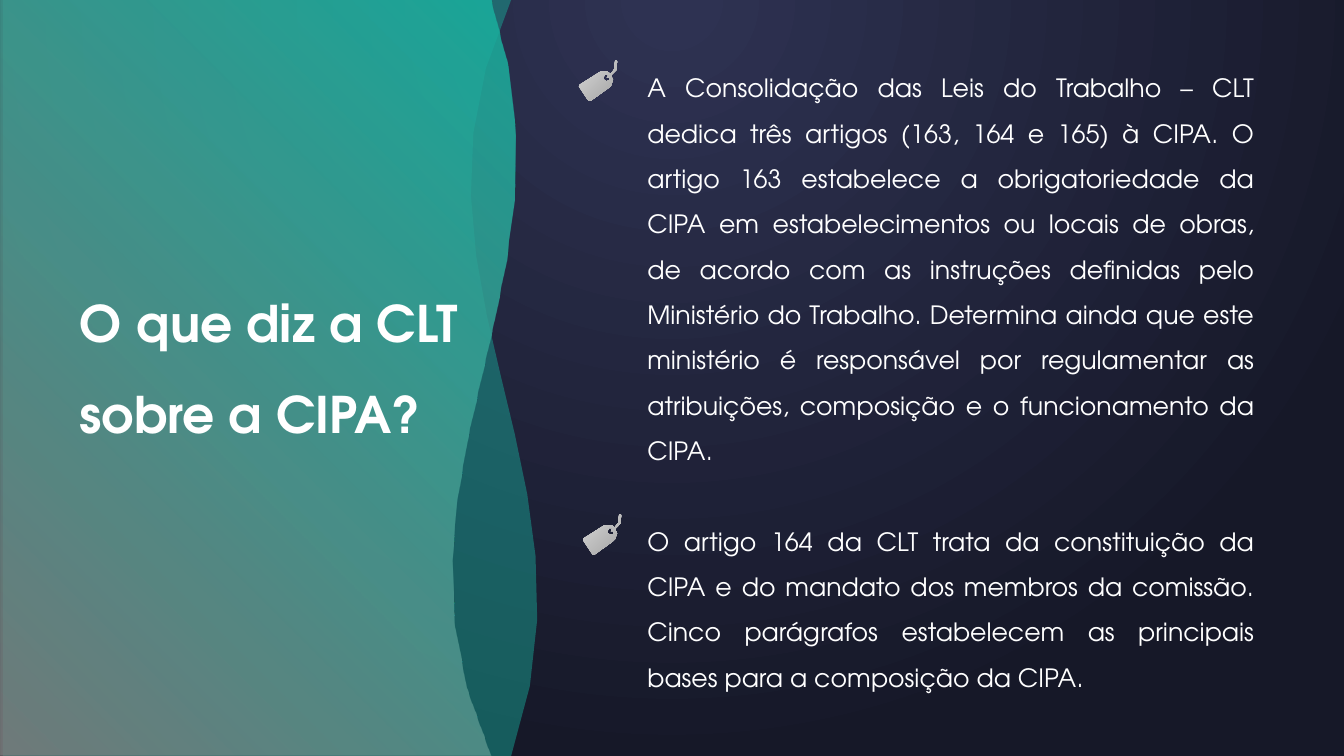
import lxml.etree
import pptx
import pptx.dml.color
import pptx.enum.text
import pptx.oxml
import pptx.oxml.ns
import pptx.util
from dataclasses import dataclass
from pptx.util import Inches


@dataclass(frozen=True)
class Theme:
    """Colours, font and type sizes of the slide."""
    font: str = "TeX Gyre Adventor"
    text: str = "FFFFFF"
    teal: str = "18B09E"
    grey: str = "7F7F7F"
    night: tuple = ("2E3252", "161828")
    silver: tuple = ("D8D8D8", "A2A2A2")
    title_size: int = 36
    body_size: int = 18


THEME = Theme()
WAVE_STEPS = 12
TAG_STEPS = 2
TITLE = "O que diz a CLT sobre a CIPA?"
ARTICLES = [
    "A Consolidação das Leis do Trabalho – CLT dedica três artigos (163, 164 e 165) à CIPA. "
    "O artigo 163 estabelece a obrigatoriedade da CIPA em estabelecimentos ou locais de obras, "
    "de acordo com as instruções definidas pelo Ministério do Trabalho. Determina ainda que este "
    "ministério é responsável por regulamentar as atribuições, composição e o funcionamento da CIPA.",
    "O artigo 164 da CLT trata da constituição da CIPA e do mandato dos membros da comissão. "
    "Cinco parágrafos estabelecem as principais bases para a composição da CIPA.",
]
BACK_WAVE = [[(5.07, 7.5), (6.07, 4.65, 3.79, 2.77, 5.07, 0), (0.03, 0), (0.03, 7.5)]]
FRONT_WAVE = [[(4.86, 0), (5.82, 2.85, 3.63, 4.73, 4.86, 7.5), (0.01, 7.5), (0.01, 0)]]
TAG_BODY = [
    (0.38, 0.01), (0.37, 0), (0.36, 0.01), (0.37, 0.07, 0.34, 0.12, 0.31, 0.14),
    (0.3, 0.12), (0.28, 0.11), (0.22, 0.11), (0.2, 0.12), (0.01, 0.24),
    (0, 0.25, 0, 0.27, 0.01, 0.27), (0.09, 0.39), (0.09, 0.41, 0.11, 0.4, 0.12, 0.4),
    (0.3, 0.27), (0.32, 0.25), (0.34, 0.19), (0.33, 0.17), (0.32, 0.15),
    (0.37, 0.12, 0.4, 0.07, 0.38, 0.01),
]
TAG_HOLE = [
    (0.3, 0.2), (0.28, 0.21, 0.26, 0.21, 0.25, 0.19),
    (0.24, 0.17, 0.25, 0.16, 0.26, 0.14), (0.3, 0.14),
    (0.29, 0.15), (0.28, 0.17), (0.31, 0.17),
]


def apply_format(target, values):
    """Set each attribute in values on target."""
    for attribute, value in values.items():
        setattr(target, attribute, value)


def paint_gradient(fill, owner, colours, direction, opacity=100):
    """Give the fill inside owner a two-colour gradient."""
    fill.gradient()
    default = next(owner.iter(pptx.oxml.ns.qn("a:gradFill")))
    stops = "".join(
        f'<a:gs pos="{position}"><a:srgbClr val="{colour}">'
        f'<a:alpha val="{opacity * 1000}"/></a:srgbClr></a:gs>'
        for position, colour in zip((2000, 100000), colours))
    gradient = pptx.oxml.parse_xml(
        f'<a:gradFill {pptx.oxml.ns.nsdecls("a")} rotWithShape="1">'
        f"<a:gsLst>{stops}</a:gsLst>{direction}</a:gradFill>")
    default.getparent().replace(default, gradient)


def linear(degrees):
    """Return the direction of a linear gradient."""
    return f'<a:lin ang="{degrees * 60000}" scaled="0"/>'


def trace(contour, curve_steps):
    """Turn line and cubic steps into a list of points."""
    points = [contour[0]]
    for step in contour[1:]:
        if len(step) == 2:
            points.append(step)
            continue
        knots = [points[-1], step[:2], step[2:4], step[4:]]
        for index in range(1, curve_steps + 1):
            t = index / curve_steps
            weights = ((1 - t) ** 3, 3 * t * (1 - t) ** 2, 3 * t * t * (1 - t), t ** 3)
            points.append(tuple(
                sum(weight * knot[axis] for weight, knot in zip(weights, knots))
                for axis in (0, 1)))
    return points


def add_outline(slide, contours, curve_steps, left=0, top=0):
    """Add an unlined freeform made of closed contours."""
    builder = None
    for contour in contours:
        start, *rest = [(Inches(left + x), Inches(top + y))
                        for x, y in trace(contour, curve_steps)]
        if builder is None:
            builder = slide.shapes.build_freeform(*start)
        else:
            builder.move_to(*start)
        builder.add_line_segments(rest, close=True)
    outline = builder.convert_to_shape()
    outline.shadow.inherit = False
    outline.line.fill.background()
    return outline


def add_tag(slide, left, top):
    """Add a silver label tag beside a paragraph."""
    tag = add_outline(slide, [TAG_BODY, TAG_HOLE], TAG_STEPS, left, top)
    paint_gradient(tag.fill, tag.element, THEME.silver, linear(45))


def add_waves(slide):
    """Add the two translucent waves of the left panel."""
    back = add_outline(slide, BACK_WAVE, WAVE_STEPS)
    back.fill.solid()
    back.fill.fore_color.rgb = pptx.dml.color.RGBColor.from_string(THEME.teal)
    colour = next(back.element.iter(pptx.oxml.ns.qn("a:srgbClr")))
    lxml.etree.SubElement(colour, pptx.oxml.ns.qn("a:alpha"), val="45000")
    front = add_outline(slide, FRONT_WAVE, WAVE_STEPS)
    paint_gradient(front.fill, front.element, (THEME.teal, THEME.grey), linear(135), 85)


def fill_placeholder(holder, box, texts, size, bold, alignment):
    """Place a placeholder on top and write its unbulleted paragraphs."""
    apply_format(holder, dict(zip(("left", "top", "width", "height"), map(Inches, box))))
    apply_format(holder.text_frame, {
        "text": "\n".join(texts),
        "word_wrap": True,
        "auto_size": pptx.enum.text.MSO_AUTO_SIZE.SHAPE_TO_FIT_TEXT,
        "vertical_anchor": pptx.enum.text.MSO_ANCHOR.TOP,
    })
    for index, paragraph in enumerate(holder.text_frame.paragraphs):
        properties = paragraph._p.get_or_add_pPr()
        properties.set("marL", "0")
        properties.set("indent", "0")
        lxml.etree.SubElement(properties, pptx.oxml.ns.qn("a:buNone"))
        apply_format(paragraph, {
            "alignment": alignment,
            "line_spacing": 1.5,
            "space_before": pptx.util.Pt(32.3 if index else 0),
        })
        font = paragraph.runs[0].font
        apply_format(font, {"name": THEME.font, "size": pptx.util.Pt(size), "bold": bold})
        font.color.rgb = pptx.dml.color.RGBColor.from_string(THEME.text)
    holder.element.getparent().append(holder.element)


def main():
    """Build and save the slide."""
    deck = pptx.Presentation()
    apply_format(deck, {"slide_width": Inches(13.33), "slide_height": Inches(7.5)})
    slide = deck.slides.add_slide(deck.slide_layouts[1])
    paint_gradient(
        slide.background.fill, slide.element, THEME.night,
        '<a:path path="circle"><a:fillToRect l="50000" t="-80000" r="50000" b="180000"/></a:path>')
    add_waves(slide)
    for left, top in ((5.74, 0.6), (5.78, 5.1)):
        add_tag(slide, left, top)
    align = pptx.enum.text.PP_ALIGN
    title, articles = slide.shapes.title, slide.placeholders[1]
    fill_placeholder(articles, (6.32, 0.52, 6.22, 6.4), ARTICLES,
                     THEME.body_size, False, align.JUSTIFY)
    fill_placeholder(title, (0.69, 2.55, 4.11, 1.8), [TITLE],
                     THEME.title_size, True, align.LEFT)
    deck.save("out.pptx")


if __name__ == "__main__":
    main()
